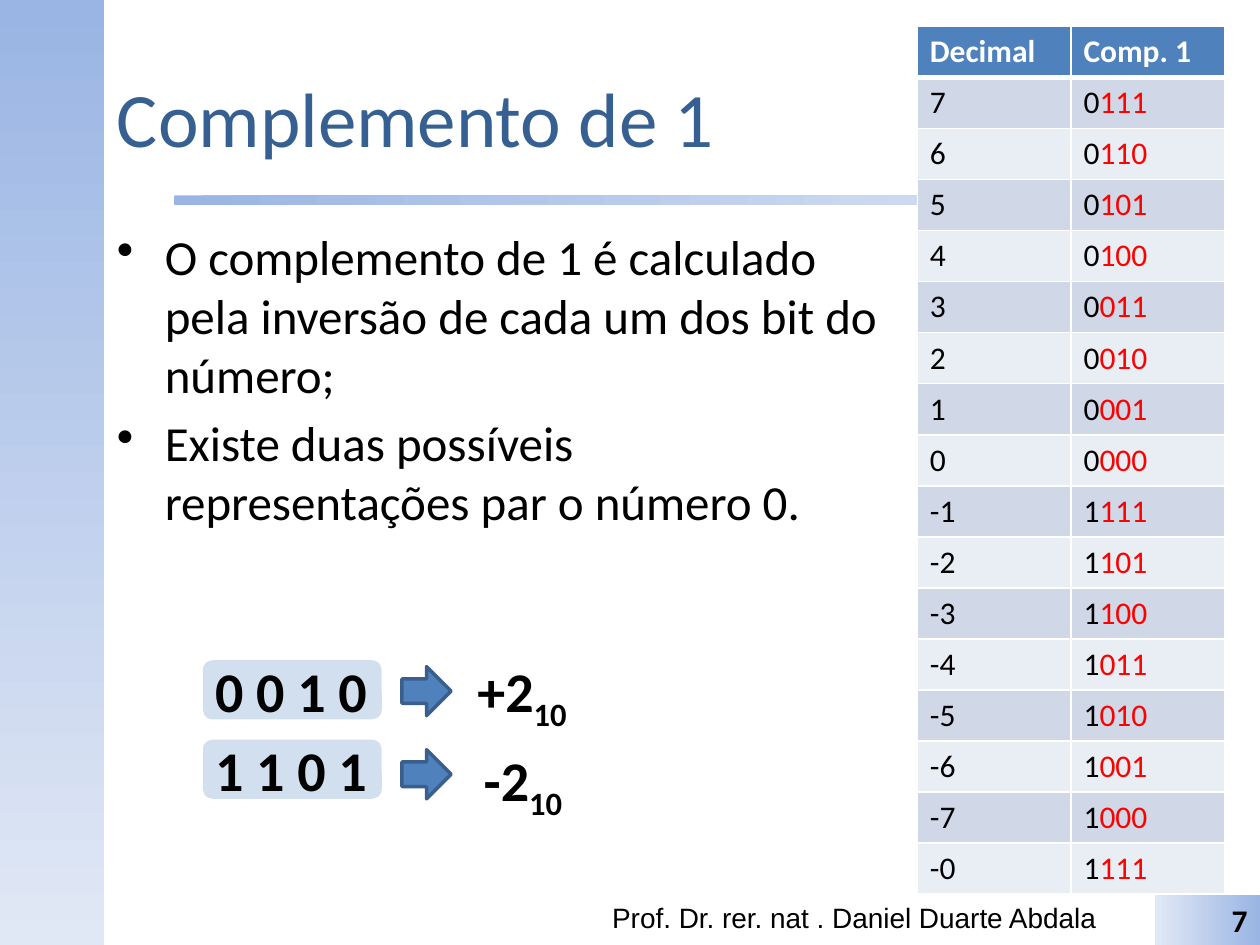
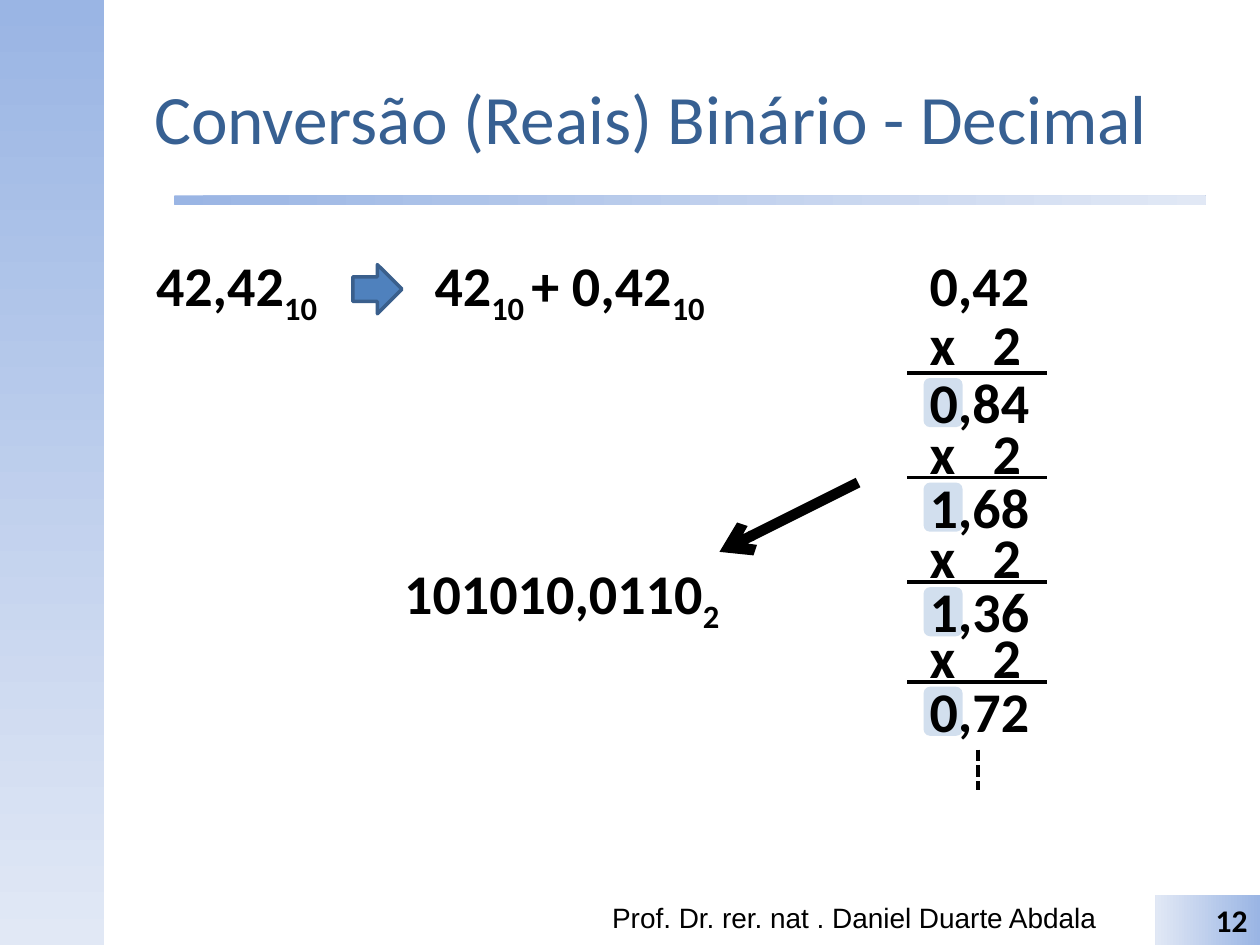
from lxml.etree import SubElement
from pptx import Presentation
from pptx.dml.color import RGBColor
from pptx.enum.dml import MSO_LINE
from pptx.enum.shapes import MSO_CONNECTOR, MSO_SHAPE
from pptx.enum.text import MSO_ANCHOR, MSO_AUTO_SIZE, PP_ALIGN
from pptx.oxml.ns import qn
from pptx.util import Inches, Pt

BLUE, EDGE, TITLE = "4F81BD", "3A5F8C", "376092"
BLACK, WHITE, RED = "000000", "FFFFFF", "FF0000"
DARK, PALE = "9AB5E4", "E1E8F5"
BANDS = ("E9EDF4", "D0D8E8")

CODES = [
    ("7", "0111"), ("6", "0110"), ("5", "0101"), ("4", "0100"),
    ("3", "0011"), ("2", "0010"), ("1", "0001"), ("0", "0000"),
    ("-1", "1111"), ("-2", "1101"), ("-3", "1100"), ("-4", "1011"),
    ("-5", "1010"), ("-6", "1001"), ("-7", "1000"), ("-0", "1111"),
]
STEPS = [(2.41, 2.96, "0,84"), (3.27, 3.79, "1,68"),
         (4.1, 4.62, "1,36"), (4.89, 5.41, "0,72")]


def color(code):
    return RGBColor.from_string(code)


def inch(*sizes):
    return [Inches(size) for size in sizes]


class Deck:
    def __init__(self):
        self.file = Presentation()
        self.file.slide_width, self.file.slide_height = inch(10, 7.5)
        self.shapes = None

    def page(self, title, width, size, number, align=PP_ALIGN.LEFT):
        slide = self.file.slides.add_slide(self.file.slide_layouts[6])
        self.shapes = slide.shapes
        self.fade(MSO_SHAPE.RECTANGLE, (0, 0, 0.83, 7.5), 270)
        self.fade(MSO_SHAPE.ROUNDED_RECTANGLE, (1.38, 1.55, 8.19, 0.08), 0)
        frame = self.text((0.83, 0.3, width, 1.25), title, size, TITLE)
        frame.vertical_anchor = MSO_ANCHOR.MIDDLE
        frame.paragraphs[0].alignment = align
        self.text((4.76, 7.1, 4.19, 0.4),
                  "Prof. Dr. rer. nat . Daniel Duarte Abdala", 16, face="Arial")
        corner = self.fade(MSO_SHAPE.RECTANGLE, (9.17, 7.1, 0.83, 0.4), 180)
        para = corner.text_frame.paragraphs[0]
        para.text = number
        para.alignment = PP_ALIGN.RIGHT
        self.font(para, 18, bold=True)

    def font(self, para, size, tint=BLACK, bold=False, face="Calibri"):
        font = para.font
        font.name, font.size, font.bold = face, Pt(size), bold
        font.color.rgb = color(tint)

    def shape(self, kind, box):
        shape = self.shapes.add_shape(kind, *inch(*box))
        shape.shadow.inherit = False
        shape.line.fill.background()
        return shape

    def fade(self, kind, box, angle):
        shape = self.shape(kind, box)
        shape.fill.gradient()
        shape.fill.gradient_angle = angle
        for stop, tint in zip(shape.fill.gradient_stops, (DARK, PALE)):
            stop.color.rgb = color(tint)
        return shape

    def glass(self, *box):
        shape = self.shape(MSO_SHAPE.ROUNDED_RECTANGLE, box)
        shape.fill.solid()
        shape.fill.fore_color.rgb = color(BLUE)
        tint = shape.element.xpath(".//a:srgbClr")[0]
        SubElement(tint, qn("a:alpha"), val="25000")

    def arrow(self, left, top):
        shape = self.shape(MSO_SHAPE.RIGHT_ARROW, (left, top, 0.39, 0.39))
        shape.fill.solid()
        shape.fill.fore_color.rgb = color(BLUE)
        shape.line.color.rgb = color(EDGE)
        shape.line.width = Pt(2)

    def text(self, box, words, size, tint=BLACK, face="Calibri"):
        frame = self.shapes.add_textbox(*inch(*box)).text_frame
        frame.word_wrap = True
        frame.text = words
        for para in frame.paragraphs:
            self.font(para, size, tint, face=face)
        return frame

    def list(self, box, items):
        frame = self.text(box, "\n".join(items), 28)
        for para in frame.paragraphs:
            para.space_before = Pt(5.6)
            props = para._p.get_or_add_pPr()
            props.set("marL", str(Inches(0.38)))
            props.set("indent", str(-Inches(0.38)))
            mark = SubElement(props, qn("a:buChar"), char="•")
            props.find(qn("a:defRPr")).addprevious(mark)

    def label(self, left, top, width, *parts):
        frame = self.text((left, top, width, 0.64), "", 32)
        frame.auto_size = MSO_AUTO_SIZE.SHAPE_TO_FIT_TEXT
        para = frame.paragraphs[0]
        for i, part in enumerate(parts):
            run = para.add_run()
            run.text = part
            if i % 2:
                run._r.get_or_add_rPr().set("baseline", "-25000")
        para.font.bold = True
        return para

    def times(self, top):
        props = self.label(7.28, top, 1.26, "x\t2")._p.get_or_add_pPr()
        tabs = SubElement(props, qn("a:tabLst"))
        SubElement(tabs, qn("a:tab"), pos=str(Inches(0.5)), algn="l")
        props.find(qn("a:defRPr")).addprevious(tabs)

    def badge(self, top, bits):
        outer = self.shapes
        self.shapes = outer.add_group_shape().shapes
        self.glass(1.61, top, 1.42, 0.47)
        self.label(1.61, top - 0.08, 1.42, bits)
        self.shapes = outer

    def line(self, start, end, width=2.25, dash=None, tip=False):
        line = self.shapes.add_connector(
            MSO_CONNECTOR.STRAIGHT, *inch(*start, *end))
        line.line.color.rgb = color(BLACK)
        line.line.width = Pt(width)
        if dash:
            line.line.dash_style = dash
        if tip:
            SubElement(line.line._get_or_add_ln(), qn("a:tailEnd"), type="arrow")
        SubElement(line.element.spPr, qn("a:effectLst"))

    def border(self, cell, row):
        props = cell._tc.get_or_add_tcPr()
        for side in "LRTB":
            thick = (row, side) in ((0, "B"), (1, "T"))
            edge = SubElement(props, qn("a:ln" + side),
                              w=str(Pt(3 if thick else 1)))
            fill = SubElement(edge, qn("a:solidFill"))
            SubElement(fill, qn("a:srgbClr"), val=WHITE)

    def table(self, box, heads, rows):
        grid = self.shapes.add_table(
            len(rows) + 1, len(heads), *inch(*box)).table
        for r, row in enumerate([heads] + rows):
            for c, words in enumerate(row):
                cell = grid.cell(r, c)
                self.border(cell, r)
                cell.fill.solid()
                cell.fill.fore_color.rgb = color(BANDS[r % 2] if r else BLUE)
                para = cell.text_frame.paragraphs[0]
                split = r and c
                para.text = words[0] if split else words
                self.font(para, 18, BLACK if r else WHITE, not r)
                if split:
                    run = para.add_run()
                    run.text = words[1:]
                    run.font.color.rgb = color(RED)


def ones(deck):
    deck.page("Complemento de 1", 6.22, 44, "7")
    deck.list((0.83, 1.75, 6.3, 3.1), [
        "O complemento de 1 é calculado pela inversão de cada um dos bit do número;",
        "Existe duas possíveis representações par o número 0.",
    ])
    deck.table((7.28, 0.21, 2.44, 6.89), ("Decimal", "Comp. 1"), CODES)
    deck.badge(5.24, "0 0 1 0")
    deck.badge(5.87, "1 1 0 1")
    deck.arrow(3.19, 5.29)
    deck.label(3.69, 5.16, 1.15, "+2", "10")
    deck.arrow(3.19, 5.95)
    deck.label(3.74, 5.87, 0.87, "-2", "10")


def reals(deck):
    deck.page("Conversão (Reais) Binário - Decimal", 8.67, 39.6, "12",
              PP_ALIGN.CENTER)
    deck.label(1.14, 1.94, 1.57, "42,42", "10")
    deck.arrow(2.8, 2.1)
    deck.label(3.35, 1.94, 2.52, "42", "10 ", "+ 0,42", "10")
    deck.label(7.28, 1.94, 1.26, "0,42")
    for top, rule, result in STEPS:
        deck.times(top)
        deck.line((7.2, rule), (8.31, rule))
        deck.glass(7.33, rule + 0.04, 0.31, 0.39)
        deck.label(7.28, rule - 0.09, 1.26, result)
    deck.line((7.76, 5.95), (7.76, 6.27), dash=MSO_LINE.SQUARE_DOT)
    deck.line((6.81, 3.83), (5.71, 4.38), 6, tip=True)
    deck.label(3.11, 4.38, 2.83, "101010,0110", "2")


def main():
    deck = Deck()
    ones(deck)
    reals(deck)
    deck.file.save("out.pptx")


if __name__ == "__main__":
    main()
